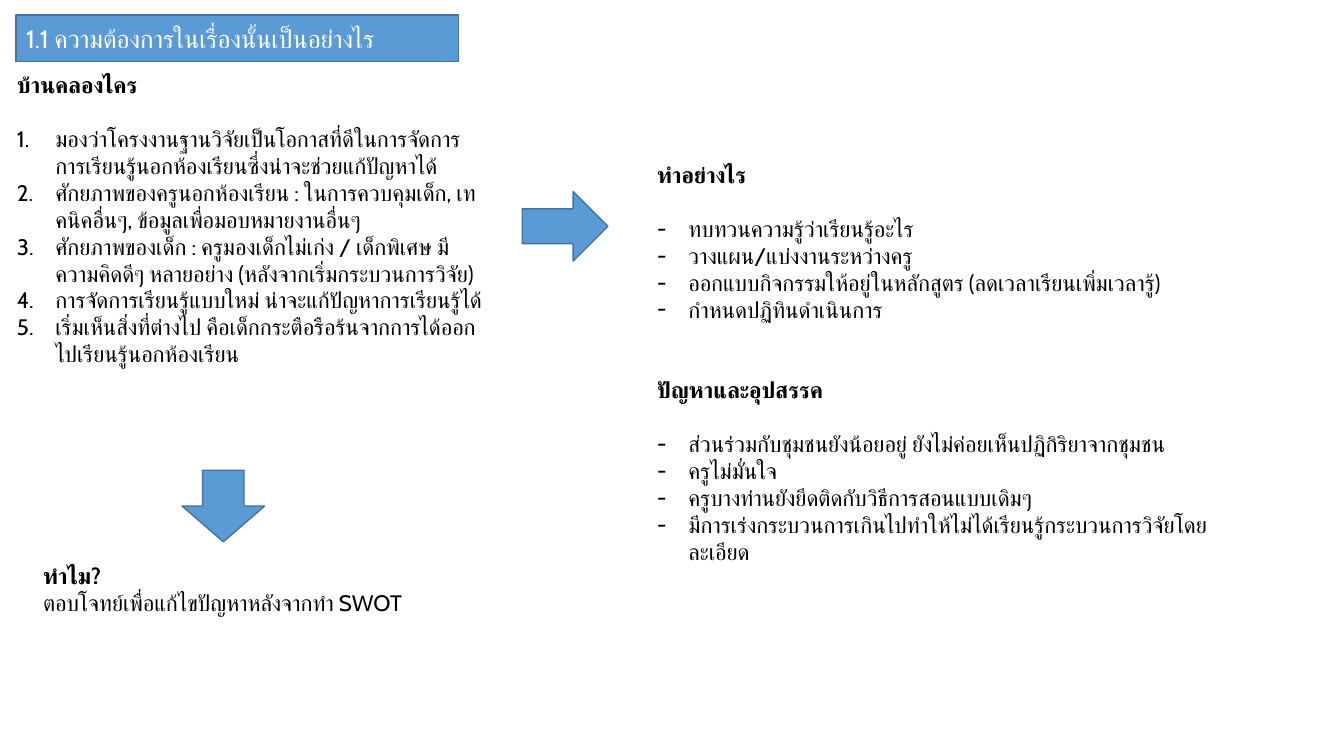
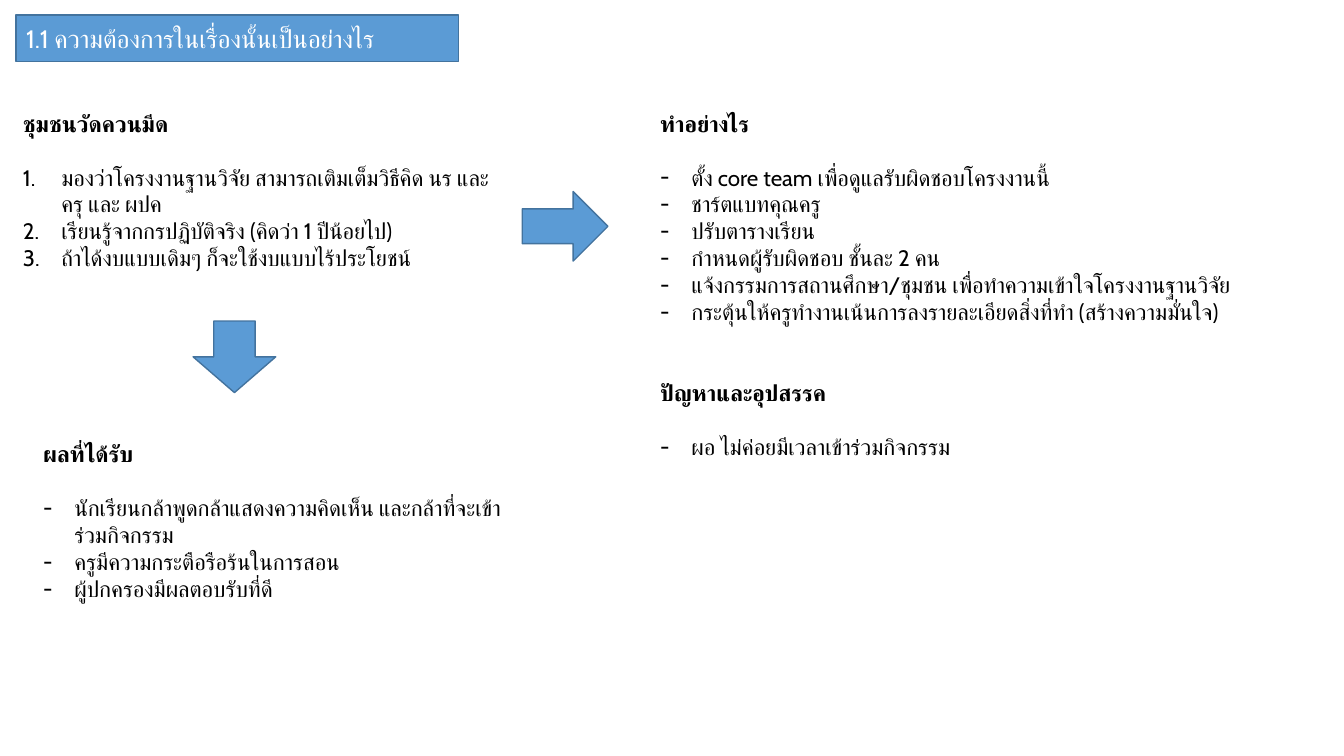
from pptx import Presentation
from pptx.dml.color import RGBColor
from pptx.enum.shapes import MSO_SHAPE
from pptx.enum.text import MSO_ANCHOR, PP_ALIGN
from pptx.oxml.ns import qn
from pptx.util import Inches, Pt
from lxml import etree

COLORS = {"fill": "5B9BD5", "line": "43739E", "text": "000000", "title": "FFFFFF"}
FONT = "Cabin"
GAP = 19.3  # height of one text line, in points
TITLE = "1.1 ความต้องการในเรื่องนั้นเป็นอย่างไร"
TITLE_BOX = (0.16, 0.15, 4.39, 0.46)
NEXT_BOX = (5.18, 1.9, 0.85, 0.69)
HOW, ISSUES = "ทำอย่างไร", "ปัญหาและอุปสรรค"
# mark: (indent in inches, bullet tag, bullet attributes, bullet font)
DASH = (0.31, "a:buChar", {"char": "-"}, FONT)
NUMBER = (0.38, "a:buAutoNum", {"type": "arabicPeriod"}, "Arial")


def color(name):
    return RGBColor.from_string(COLORS[name])


def style(para, size, name="text", bold=False):
    for run in para.runs:
        font = run.font
        font.size, font.bold, font.name = Pt(size), bold, FONT
        font.color.rgb = color(name)
        etree.SubElement(run._r.get_or_add_rPr(), qn("a:cs")).set("typeface", FONT)


def bullet(para, mark):
    indent, tag, attrs, face = mark
    props = para._p.get_or_add_pPr()
    props.set("marL", str(Inches(indent)))
    props.set("indent", str(-Inches(indent)))
    etree.SubElement(props, qn("a:buFont")).set("typeface", face)
    etree.SubElement(props, qn(tag), attrs)


def add_block(slide, kind, box, turn=0):
    shape = slide.shapes.add_shape(kind, *map(Inches, box))
    shape.shadow.inherit = False
    shape.fill.solid()
    shape.fill.fore_color.rgb = color("fill")
    shape.line.color.rgb = color("line")
    shape.line.width = Pt(1)
    shape.rotation = turn
    return shape


def add_title(slide):
    frame = add_block(slide, MSO_SHAPE.RECTANGLE, TITLE_BOX).text_frame
    frame.text = TITLE
    frame.vertical_anchor = MSO_ANCHOR.MIDDLE
    para = frame.paragraphs[0]
    para.alignment = PP_ALIGN.LEFT
    style(para, 18, "title")


def add_text(slide, box, parts):
    """Fill a text box with parts, each (heading, mark or None, lines)."""
    frame = slide.shapes.add_textbox(*map(Inches, box)).text_frame
    frame.word_wrap = True
    for index, (head, mark, lines) in enumerate(parts):
        para = frame.add_paragraph() if index else frame.paragraphs[0]
        para.text = head
        style(para, 16, bold=True)
        if index:
            para.space_before = Pt(2 * GAP)
        if mark:
            para.space_after = Pt(GAP)
        for line in lines:
            para = frame.add_paragraph()
            para.text = line
            style(para, 16)
            if mark:
                bullet(para, mark)


def add_page(deck, needs, plan, result, down):
    """Add a slide; needs, plan and result are (box, parts)."""
    slide = deck.slides.add_slide(deck.slide_layouts[6])
    add_title(slide)
    for box, parts in (plan, needs, result):
        add_text(slide, box, parts)
    add_block(slide, MSO_SHAPE.RIGHT_ARROW, down, 90)
    add_block(slide, MSO_SHAPE.RIGHT_ARROW, NEXT_BOX)


PAGES = [
    {
        "needs": ((0.07, 0.66, 4.86, 3.87), [("บ้านคลองไคร", NUMBER, [
            "มองว่าโครงงานฐานวิจัยเป็นโอกาสที่ดีในการจัดการการเรียนรู้นอกห้องเรียนซึ่งน่าจะช่วยแก้ปัญหาได้",
            "ศักยภาพของครูนอกห้องเรียน : ในการควบคุมเด็ก, เทคนิคอื่นๆ, ข้อมูลเพื่อมอบหมายงานอื่นๆ",
            "ศักยภาพของเด็ก : ครูมองเด็กไม่เก่ง / เด็กพิเศษ มีความคิดดีๆ หลายอย่าง (หลังจากเริ่มกระบวนการวิจัย)",
            "การจัดการเรียนรู้แบบใหม่ น่าจะแก้ปัญหาการเรียนรู้ได้",
            "เริ่มเห็นสิ่งที่ต่างไป คือเด็กกระตือรือร้นจากการได้ออกไปเรียนรู้นอกห้องเรียน",
        ])]),
        "plan": ((6.42, 1.55, 6.16, 4.14), [
            (HOW, DASH, [
                "ทบทวนความรู้ว่าเรียนรู้อะไร",
                "วางแผน/แบ่งงานระหว่างครู",
                "ออกแบบกิจกรรมให้อยู่ในหลักสูตร (ลดเวลาเรียนเพิ่มเวลารู้)",
                "กำหนดปฏิทินดำเนินการ",
            ]),
            (ISSUES, DASH, [
                "ส่วนร่วมกับชุมชนยังน้อยอยู่ ยังไม่ค่อยเห็นปฏิกิริยาจากชุมชน",
                "ครูไม่มั่นใจ",
                "ครูบางท่านยังยึดติดกับวิธีการสอนแบบเดิมๆ",
                "มีการเร่งกระบวนการเกินไปทำให้ไม่ได้เรียนรู้กระบวนการวิจัยโดยละเอียด",
            ]),
        ]),
        "result": ((0.33, 5.53, 4.86, 1.18), [
            ("ทำไม?", None, ["ตอบโจทย์เพื่อแก้ไขปัญหาหลังจากทำ SWOT"]),
        ]),
        "down": (1.86, 4.61, 0.71, 0.82),
    },
    {
        "needs": ((0.13, 1.04, 4.86, 1.72), [("ชุมชนวัดควนมีด", NUMBER, [
            "มองว่าโครงงานฐานวิจัย สามารถเติมเต็มวิธีคิด นร และ ครุ และ ผปค",
            "เรียนรู้จากกรปฏิบัติจริง (คิดว่า 1 ปีน้อยไป)",
            "ถ้าได้งบแบบเดิมๆ ก็จะใช้งบแบบไร้ประโยชน์",
        ])]),
        "plan": ((6.45, 1.04, 6.16, 4.14), [
            (HOW, DASH, [
                "ตั้ง core team เพื่อดูแลรับผิดชอบโครงงานนี้",
                "ชาร์ตแบทคุณครู",
                "ปรับตารางเรียน",
                "กำหนดผู้รับผิดชอบ ชั้นละ 2 คน",
                "แจ้งกรรมการสถานศึกษา/ชุมชน เพื่อทำความเข้าใจโครงงานฐานวิจัย",
                "กระตุ้นให้ครูทำงานเน้นการลงรายละเอียดสิ่งที่ทำ (สร้างความมั่นใจ)",
            ]),
            (ISSUES, DASH, ["ผอ ไม่ค่อยมีเวลาเข้าร่วมกิจกรรม"]),
        ]),
        "result": ((0.33, 4.32, 4.86, 2.26), [("ผลที่ได้รับ", DASH, [
            "นักเรียนกล้าพูดกล้าแสดงความคิดเห็น และกล้าที่จะเข้าร่วมกิจกรรม",
            "ครูมีความกระตือรือร้นในการสอน",
            "ผู้ปกครองมีผลตอบรับที่ดี",
        ])]),
        "down": (1.97, 3.13, 0.71, 0.82),
    },
]


def main():
    deck = Presentation()
    deck.slide_width, deck.slide_height = Inches(13.33), Inches(7.5)
    for page in PAGES:
        add_page(deck, **page)
    deck.save("out.pptx")


if __name__ == "__main__":
    main()
